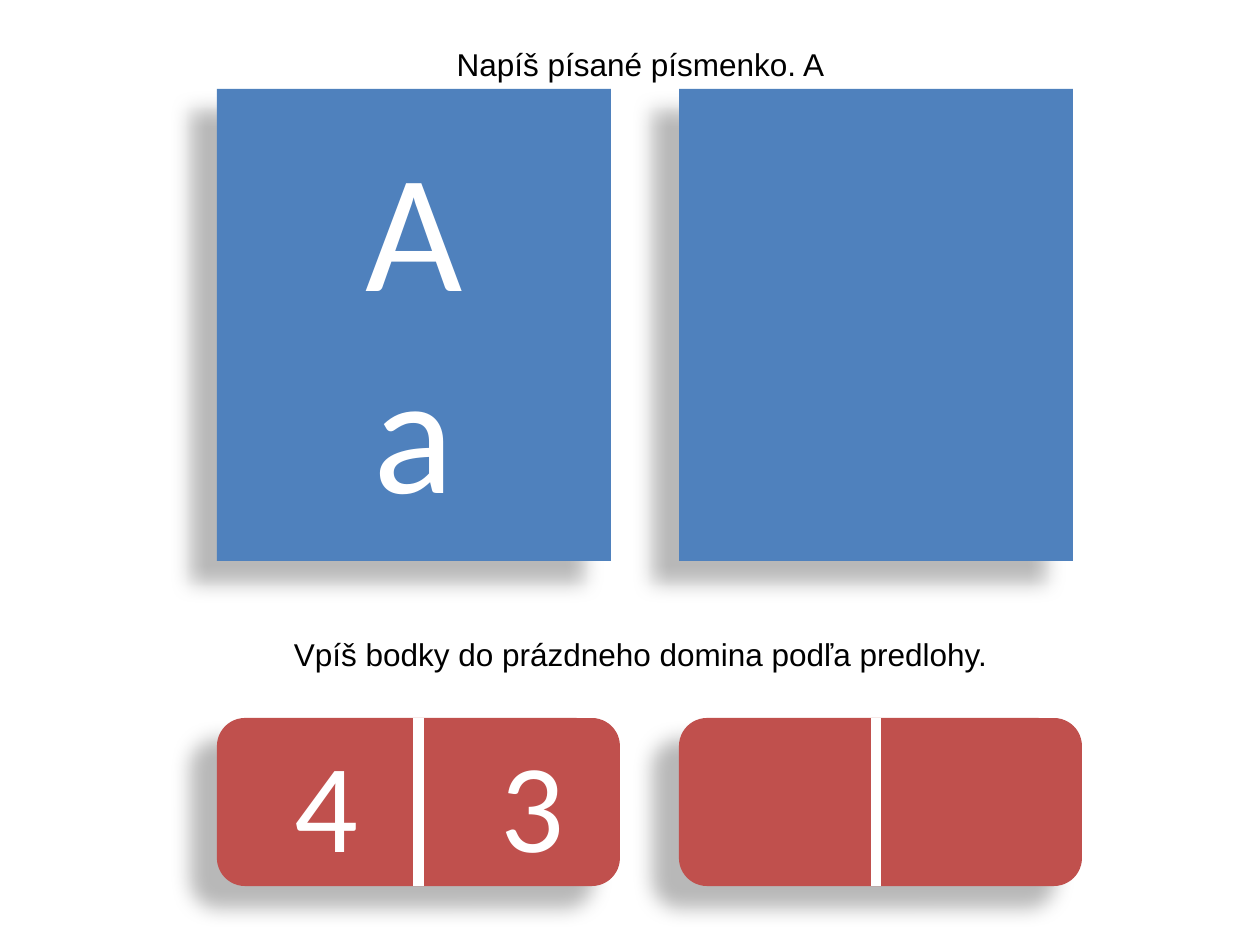
from dataclasses import dataclass

from lxml import etree
from pptx import Presentation
from pptx.dml.color import RGBColor
from pptx.enum.shapes import MSO_CONNECTOR, MSO_SHAPE
from pptx.enum.text import MSO_ANCHOR, MSO_AUTO_SIZE, PP_ALIGN
from pptx.oxml.ns import qn
from pptx.shapes.autoshape import Shape
from pptx.slide import Slide
from pptx.util import Emu, Pt

PX_PER_INCH = 126
SLIDE_WIDTH, SLIDE_HEIGHT = 1260, 945

BLUE = RGBColor(0x4F, 0x81, 0xBD)
RED = RGBColor(0xC0, 0x50, 0x4D)
WHITE = RGBColor(0xFF, 0xFF, 0xFF)
BLACK = RGBColor(0x00, 0x00, 0x00)

RECTANGLE = MSO_SHAPE.RECTANGLE
ROUNDED = MSO_SHAPE.ROUNDED_RECTANGLE
STRAIGHT = MSO_CONNECTOR.STRAIGHT
CENTER = PP_ALIGN.CENTER
LEFT = PP_ALIGN.LEFT
MIDDLE = MSO_ANCHOR.MIDDLE
FIT_SHAPE = MSO_AUTO_SIZE.SHAPE_TO_FIT_TEXT

COLUMNS = (217, 679)
CARD_TOP, CARD_WIDTH, CARD_HEIGHT = 89, 394, 472
DOMINO_TOP, DOMINO_WIDTH, DOMINO_HEIGHT = 718, 403, 168
DIGIT_STOPS = (57, 263)
EMPTY_DIVIDER_X = 876


@dataclass(frozen=True)
class Panel:
    preset: MSO_SHAPE
    left: int
    top: int
    width: int
    height: int
    fill: RGBColor
    lines: tuple[str, ...] = ()
    size: int = 18
    align: PP_ALIGN = CENTER
    tab_stops: tuple[int, ...] = ()


@dataclass(frozen=True)
class Instruction:
    top: int
    text: str


CARDS = [
    Panel(RECTANGLE, left, CARD_TOP, CARD_WIDTH, CARD_HEIGHT, BLUE, lines, 96)
    for left, lines in zip(COLUMNS, (("A", "a"), ()))
]
DOMINOES = [
    Panel(ROUNDED, left, DOMINO_TOP, DOMINO_WIDTH, DOMINO_HEIGHT, RED,
          lines, 72, LEFT, DIGIT_STOPS)
    for left, lines in zip(COLUMNS, (("\t4\t3",), ()))
]
INSTRUCTIONS = [
    Instruction(39, "Napíš písané písmenko. A"),
    Instruction(629, "Vpíš bodky do prázdneho domina podľa predlohy."),
]


def px(length: int) -> Emu:
    return Emu(round(length * 914400 / PX_PER_INCH))


def add_shadow(shape: Shape) -> None:
    """Cast a soft black shadow down and to the left."""
    shape.shadow.inherit = False
    effects = shape._element.spPr.find(qn("a:effectLst"))
    shadow = etree.SubElement(
        effects, qn("a:outerShdw"), blurRad=str(Pt(11.8)), dist=str(Pt(19.7)),
        dir=str(141 * 60000), algn="tl", rotWithShape="0")
    color = etree.SubElement(shadow, qn("a:srgbClr"), val=str(BLACK))
    etree.SubElement(color, qn("a:alpha"), val="28000")


def add_tab_stops(paragraph, stops: tuple[int, ...]) -> None:
    properties = paragraph._p.get_or_add_pPr()
    tab_list = etree.SubElement(properties, qn("a:tabLst"))
    for stop in stops:
        etree.SubElement(tab_list, qn("a:tab"), pos=str(px(stop)), algn="l")


def write_lines(shape: Shape, lines: tuple[str, ...], font_name: str, size: int,
                color: RGBColor, align: PP_ALIGN,
                tab_stops: tuple[int, ...] = ()) -> None:
    frame = shape.text_frame
    frame.word_wrap = True
    for index, line in enumerate(lines):
        paragraph = frame.add_paragraph() if index else frame.paragraphs[0]
        paragraph.text = line
        paragraph.alignment = align
        if tab_stops:
            add_tab_stops(paragraph, tab_stops)
        paragraph.font.name = font_name
        paragraph.font.size = Pt(size)
        paragraph.font.color.rgb = color


def add_panel(slide: Slide, panel: Panel) -> Shape:
    shape = slide.shapes.add_shape(
        panel.preset, px(panel.left), px(panel.top), px(panel.width), px(panel.height))
    shape.fill.solid()
    shape.fill.fore_color.rgb = panel.fill
    shape.line.fill.background()
    add_shadow(shape)
    shape.text_frame.vertical_anchor = MIDDLE
    write_lines(shape, panel.lines, "Calibri", panel.size, WHITE, panel.align,
                panel.tab_stops)
    return shape


def add_instruction(slide: Slide, instruction: Instruction) -> None:
    box = slide.shapes.add_textbox(px(178), px(instruction.top), px(925), px(50))
    write_lines(box, (instruction.text,), "Arial", 18, BLACK, CENTER)
    box.text_frame.auto_size = FIT_SHAPE


def add_divider(slide: Slide, x: int):
    divider = slide.shapes.add_connector(
        STRAIGHT, px(x), px(DOMINO_TOP), px(x), px(DOMINO_TOP + DOMINO_HEIGHT))
    divider.line.color.rgb = WHITE
    divider.line.width = Pt(6)
    etree.SubElement(divider._element.spPr, qn("a:effectLst"))
    return divider


def main() -> None:
    presentation = Presentation()
    presentation.slide_width = px(SLIDE_WIDTH)
    presentation.slide_height = px(SLIDE_HEIGHT)
    slide = presentation.slides.add_slide(presentation.slide_layouts[6])

    for card in CARDS:
        add_panel(slide, card)
    add_instruction(slide, INSTRUCTIONS[0])
    filled_domino, _ = [add_panel(slide, domino) for domino in DOMINOES]
    add_instruction(slide, INSTRUCTIONS[1])

    middle_divider = add_divider(slide, COLUMNS[0] + DOMINO_WIDTH // 2)
    middle_divider.begin_connect(filled_domino, 0)
    middle_divider.end_connect(filled_domino, 2)
    add_divider(slide, EMPTY_DIVIDER_X)

    presentation.save("out.pptx")


if __name__ == "__main__":
    main()
